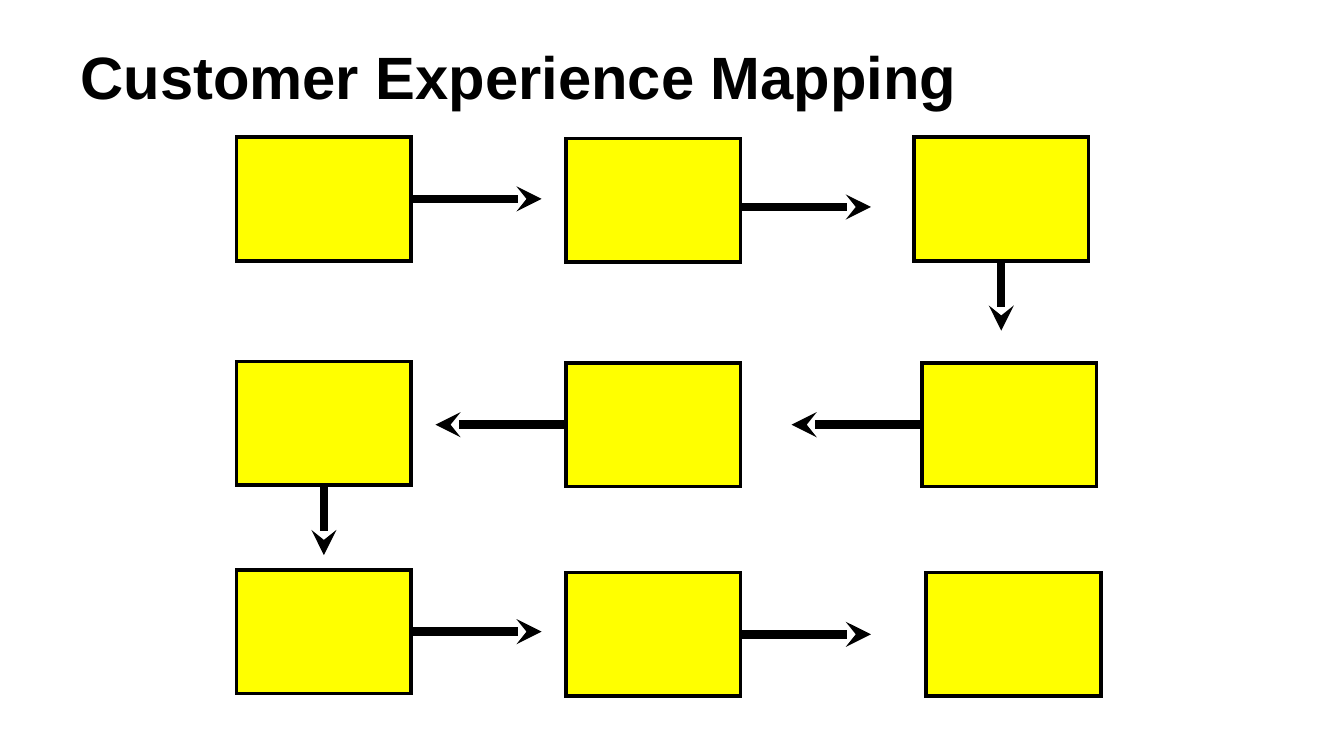
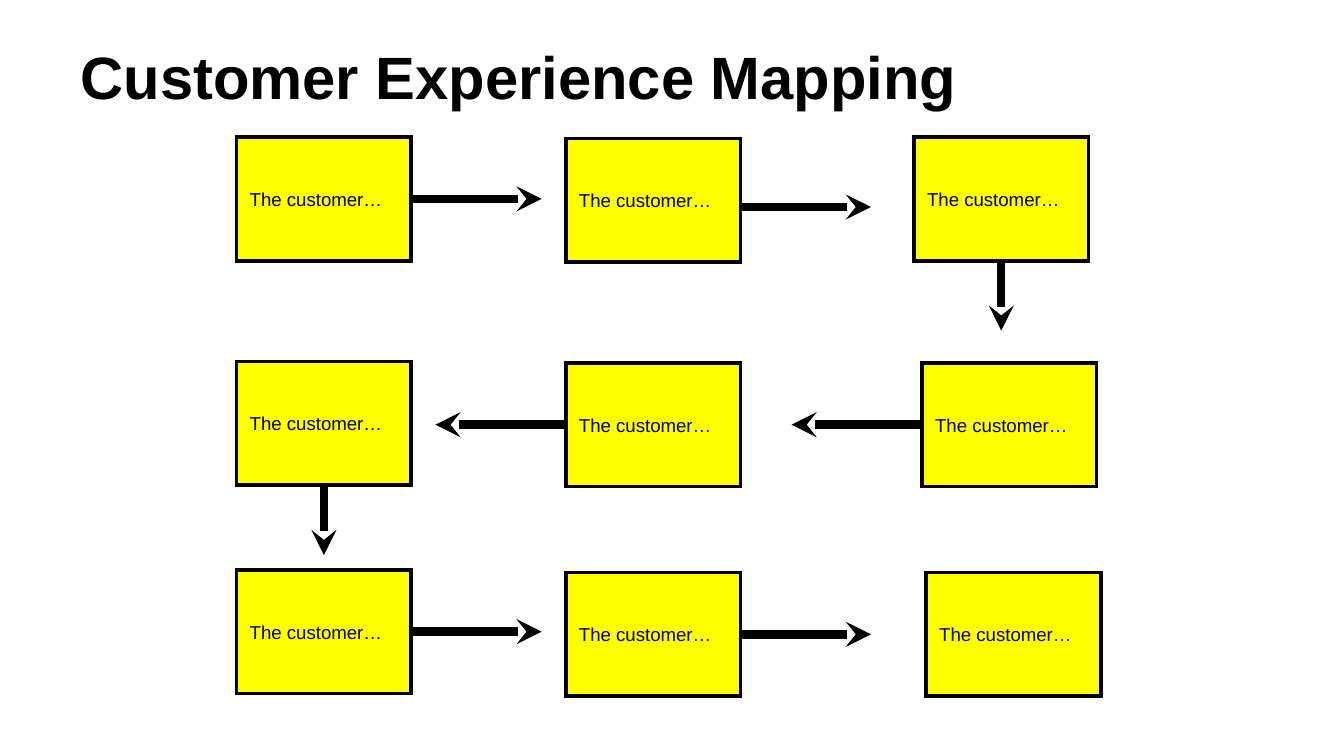
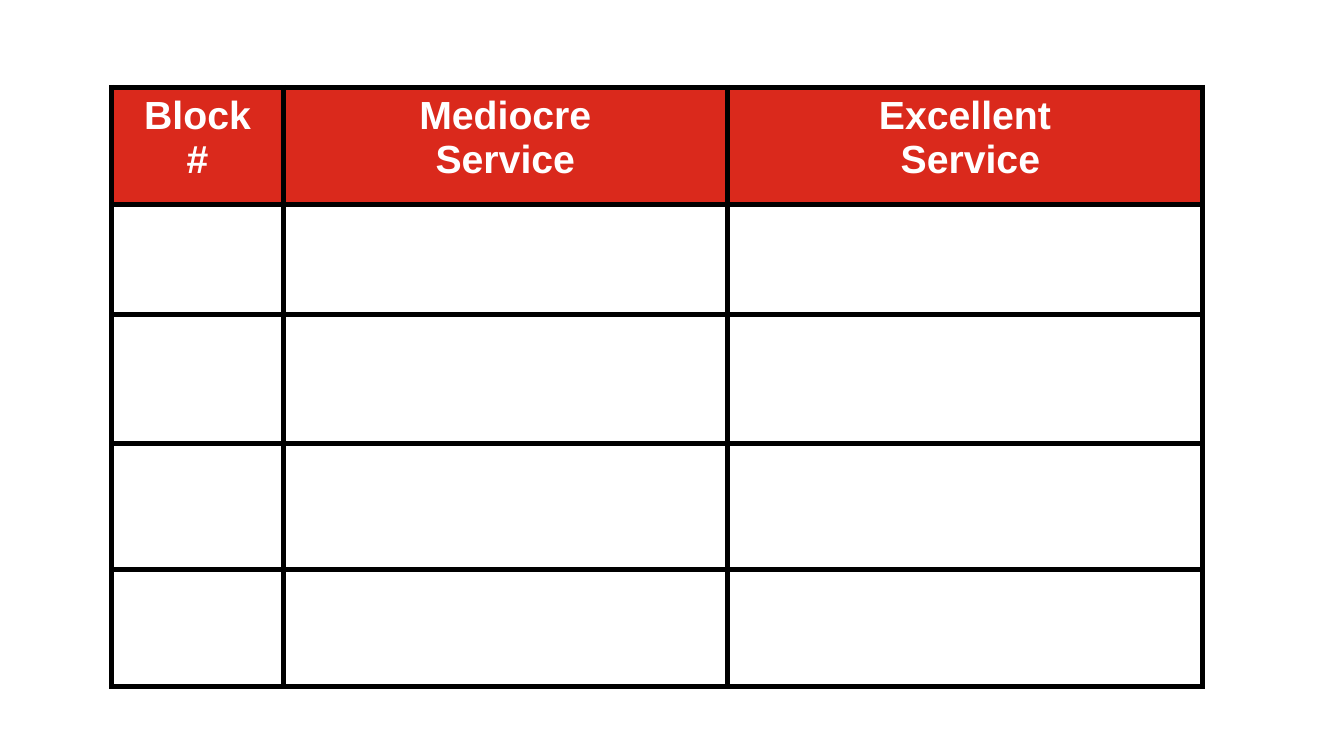
from typing import NamedTuple

from lxml.etree import SubElement
from pptx import Presentation
from pptx.dml.color import RGBColor
from pptx.enum.shapes import MSO_CONNECTOR, MSO_SHAPE
from pptx.enum.text import MSO_ANCHOR, MSO_AUTO_SIZE, PP_ALIGN
from pptx.oxml.ns import qn
from pptx.util import Inches, Pt

BLACK = RGBColor(0x00, 0x00, 0x00)
WHITE = RGBColor(0xFF, 0xFF, 0xFF)
YELLOW = RGBColor(0xFF, 0xFF, 0x00)
RED = RGBColor(0xDA, 0x29, 0x1C)

TITLE_FONT = {"name": "Arial", "size": Pt(32), "bold": True}
STEP_FONT = {"name": "Arial", "size": Pt(10), "bold": False}
HEADER_FONT = {"name": "Arial", "size": Pt(21), "bold": True}

SLIDE_WIDTH = Inches(10)
SLIDE_HEIGHT = SLIDE_WIDTH * 9 // 16
STEP_WIDTH, STEP_HEIGHT = 1.3, 0.92


class Direction(NamedTuple):
    """Side of a step that an arrow leaves from, and its run."""
    site: int
    start_x: float
    start_y: float
    run_x: float
    run_y: float


class Step(NamedTuple):
    """Place of a step in the map, its outgoing arrow and the arrow's drop."""
    x: float
    y: float
    direction: Direction | None
    drop: float = 0


RIGHT = Direction(3, STEP_WIDTH, STEP_HEIGHT / 2, 0.97, 0)
LEFT = Direction(1, 0, STEP_HEIGHT / 2, -0.97, 0)
DOWN = Direction(2, STEP_WIDTH / 2, STEP_HEIGHT, 0, 0.52)

JOURNEY = [
    Step(0, 0, RIGHT), Step(2.45, 0.01, RIGHT, 0.05), Step(5.04, 0, DOWN),
    Step(5.1, 1.68, LEFT), Step(2.45, 1.68, LEFT), Step(0, 1.67, DOWN),
    Step(0, 3.22, RIGHT), Step(2.45, 3.24, RIGHT), Step(5.13, 3.24, None),
]

HEADERS = ["Block\v#", "Mediocre\vService", "Excellent\v Service"]
COLUMN_WIDTHS = [1.28, 3.3, 3.54]
ROW_HEIGHTS = [0.87, 0.82, 0.96, 0.94, 0.87]


def write(frame, text, style, color, align):
    """Put one formatted paragraph in a text frame."""
    frame.text = text
    paragraph = frame.paragraphs[0]
    paragraph.alignment = align
    for run in paragraph.runs:
        for attribute, value in style.items():
            setattr(run.font, attribute, value)
        run.font.color.rgb = color


def add_title(slide, left, top, width, height):
    """Add the slide title."""
    title = slide.shapes.add_textbox(*map(Inches, (left, top, width, height)))
    frame = title.text_frame
    write(frame, "Customer Experience Mapping", TITLE_FONT, BLACK, PP_ALIGN.LEFT)
    frame.word_wrap = False
    frame.auto_size = MSO_AUTO_SIZE.SHAPE_TO_FIT_TEXT


def add_step(slide, left, top, label):
    """Add one yellow step, with a label if there is one."""
    box = slide.shapes.add_shape(
        MSO_SHAPE.RECTANGLE, *map(Inches, (left, top, STEP_WIDTH, STEP_HEIGHT)))
    box.shadow.inherit = False
    box.fill.solid()
    box.fill.fore_color.rgb = YELLOW
    box.line.color.rgb = BLACK
    box.line.width = Pt(2)
    SubElement(box.line._get_or_add_ln(), qn("a:miter"), lim="800000")
    if label:
        box.text_frame.word_wrap = True
        box.text_frame.vertical_anchor = MSO_ANCHOR.MIDDLE
        write(box.text_frame, label, STEP_FONT, BLACK, PP_ALIGN.LEFT)
    return box


def add_arrow(slide, box, left, top, direction, drop):
    """Add the arrow that leaves a step, joined when it starts mid-side."""
    x, y = left + direction.start_x, top + direction.start_y + drop
    ends = (x, y, x + direction.run_x, y + direction.run_y)
    arrow = slide.shapes.add_connector(MSO_CONNECTOR.STRAIGHT, *map(Inches, ends))
    if not drop:
        arrow.begin_connect(box, direction.site)
    arrow.line.color.rgb = BLACK
    arrow.line.width = Pt(4.5)
    SubElement(arrow.line._get_or_add_ln(), qn("a:tailEnd"), type="stealth")
    SubElement(arrow._element.spPr, qn("a:effectLst"))


def add_journey(slide, left, top, label):
    """Add the winding map of steps and arrows."""
    for step in JOURNEY:
        x, y = left + step.x, top + step.y
        box = add_step(slide, x, y, label)
        if step.direction:
            add_arrow(slide, box, x, y, step.direction, step.drop)


def add_map_slide(deck, label=""):
    """Add a titled slide with the customer journey."""
    slide = deck.slides.add_slide(deck.slide_layouts[6])
    add_title(slide, 0.5, 0.25, 6.78, 0.64)
    add_journey(slide, 1.76, 1.02, label)


def add_borders(cell):
    """Draw a black line on each side of a cell."""
    properties = cell._tc.get_or_add_tcPr()
    for side in ("lnL", "lnR", "lnT", "lnB"):
        border = SubElement(properties, qn(f"a:{side}"), w=str(Pt(3)))
        fill = SubElement(border, qn("a:solidFill"))
        SubElement(fill, qn("a:srgbClr"), val=str(BLACK))


def add_service_table(slide, left, top):
    """Add the table that compares mediocre and excellent service."""
    size = (sum(COLUMN_WIDTHS), sum(ROW_HEIGHTS))
    table = slide.shapes.add_table(
        len(ROW_HEIGHTS), len(COLUMN_WIDTHS), *map(Inches, (left, top, *size))).table
    table.first_row = table.horz_banding = False
    for column, width in zip(table.columns, COLUMN_WIDTHS):
        column.width = Inches(width)
    for row, height in zip(table.rows, ROW_HEIGHTS):
        row.height = Inches(height)
    for cell in table.iter_cells():
        add_borders(cell)
        cell.fill.background()
    for cell, header in zip(table.rows[0].cells, HEADERS):
        cell.fill.solid()
        cell.fill.fore_color.rgb = RED
        write(cell.text_frame, header, HEADER_FONT, WHITE, PP_ALIGN.CENTER)


def add_table_slide(deck):
    """Add the slide with the service table."""
    slide = deck.slides.add_slide(deck.slide_layouts[6])
    add_service_table(slide, 0.83, 0.65)


def main():
    """Build and save the deck."""
    deck = Presentation()
    deck.slide_width, deck.slide_height = SLIDE_WIDTH, SLIDE_HEIGHT
    add_map_slide(deck)
    add_map_slide(deck, "The customer…")
    add_table_slide(deck)
    deck.save("out.pptx")


if __name__ == "__main__":
    main()
